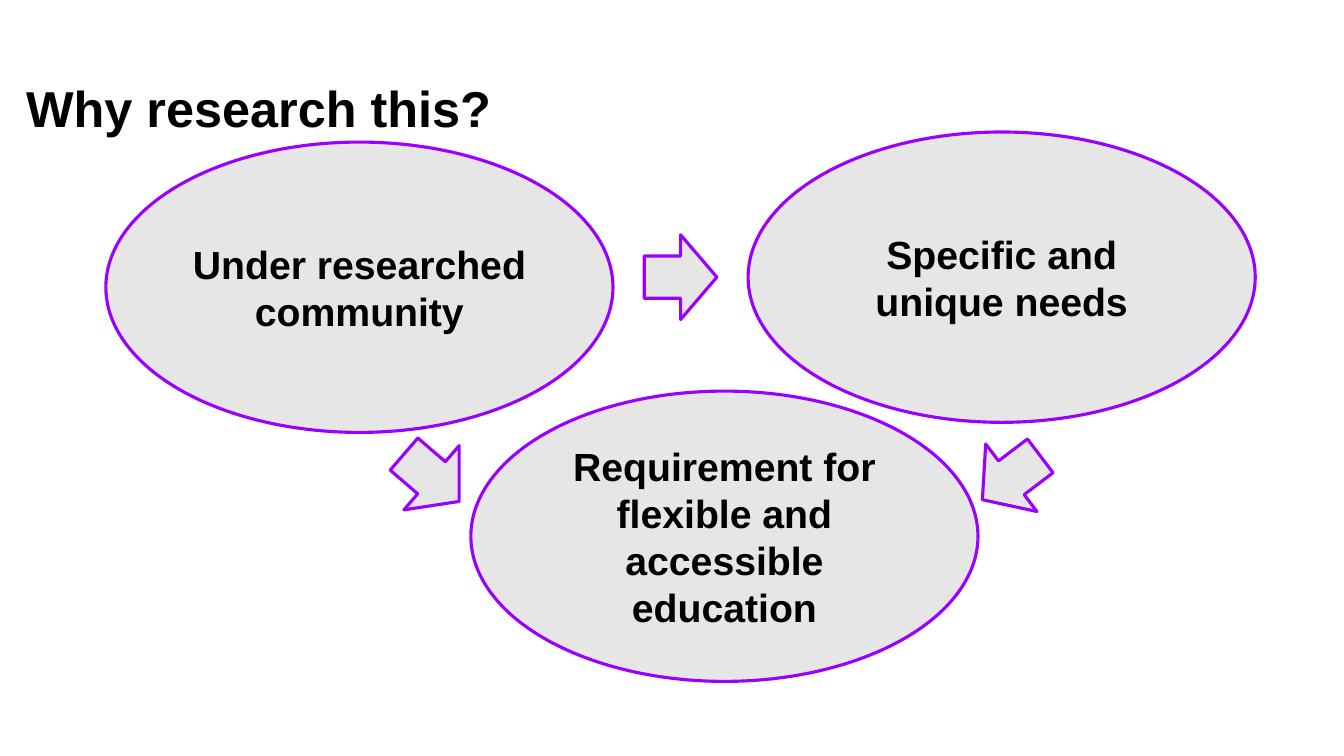
from dataclasses import dataclass

from pptx import Presentation
from pptx.dml.color import RGBColor
from pptx.enum.shapes import MSO_SHAPE as Preset
from pptx.enum.text import MSO_ANCHOR as Anchor, PP_ALIGN as Align
from pptx.shapes.autoshape import Shape
from pptx.slide import Slide
from pptx.text.text import TextFrame
from pptx.util import Inches, Pt

BLACK = RGBColor(0x00, 0x00, 0x00)
WHITE = RGBColor(0xFF, 0xFF, 0xFF)
PALE_GREY = RGBColor(0xE7, 0xE6, 0xE6)
PURPLE = RGBColor(0x99, 0x00, 0xFF)

REASON_SIZE = (5.03, 2.88)
ARROW_SIZE = (0.72, 0.84)


@dataclass
class Reason:
    text: str
    left: float
    top: float


@dataclass
class Arrow:
    left: float
    top: float
    rotation: float


REASONS = [
    Reason("Under researched community", 1.05, 1.41),
    Reason("Specific and unique needs", 7.42, 1.31),
    Reason("Requirement for flexible and accessible education", 4.67, 3.88),
]
ARROWS = [
    Arrow(6.39, 2.33, 0),
    Arrow(9.67, 4.32, 142.8),
    Arrow(3.92, 4.32, 40.7),
]


def write(frame: TextFrame, text: str, size: int, align: Align, margin: float) -> None:
    frame_format = {
        "word_wrap": True,
        "vertical_anchor": Anchor.MIDDLE,
        "margin_left": Inches(0.1),
        "margin_right": Inches(0.1),
        "margin_top": Inches(margin),
        "margin_bottom": Inches(margin),
    }
    for attribute, value in frame_format.items():
        setattr(frame, attribute, value)
    frame.text = text
    line = frame.paragraphs[0]
    line.alignment = align
    font = line.runs[0].font
    for attribute, value in {"name": "Arial", "size": Pt(size), "bold": True}.items():
        setattr(font, attribute, value)
    font.color.rgb = BLACK


def draw_outlined(
    slide: Slide, preset: Preset, left: float, top: float, size: tuple[float, float]
) -> Shape:
    outlined = slide.shapes.add_shape(
        preset, *(Inches(length) for length in (left, top, *size))
    )
    outlined.shadow.inherit = False
    outlined.fill.solid()
    outlined.fill.fore_color.rgb = PALE_GREY
    outlined.line.color.rgb = PURPLE
    outlined.line.width = Pt(2.25)
    return outlined


def draw_heading(slide: Slide) -> None:
    heading = slide.shapes.title
    place = {"left": 0.16, "top": 0.59, "width": 11.28, "height": 1.02}
    for attribute, value in place.items():
        setattr(heading, attribute, Inches(value))
    write(heading.text_frame, "Why research this?", 36, Align.LEFT, 0.05)
    heading.text_frame.paragraphs[0].line_spacing = 0.9


def draw_reason(slide: Slide, reason: Reason) -> None:
    ellipse = draw_outlined(slide, Preset.OVAL, reason.left, reason.top, REASON_SIZE)
    write(ellipse.text_frame, reason.text, 28, Align.CENTER, 0.1)


def draw_arrow(slide: Slide, arrow: Arrow) -> None:
    pointer = draw_outlined(slide, Preset.RIGHT_ARROW, arrow.left, arrow.top, ARROW_SIZE)
    pointer.rotation = arrow.rotation


def main() -> None:
    deck = Presentation()
    deck.slide_width, deck.slide_height = Inches(13.33), Inches(7.5)
    slide = deck.slides.add_slide(deck.slide_layouts[5])
    slide.background.fill.solid()
    slide.background.fill.fore_color.rgb = WHITE
    draw_heading(slide)
    for reason in REASONS:
        draw_reason(slide, reason)
    for arrow in ARROWS:
        draw_arrow(slide, arrow)
    deck.save("out.pptx")


if __name__ == "__main__":
    main()
